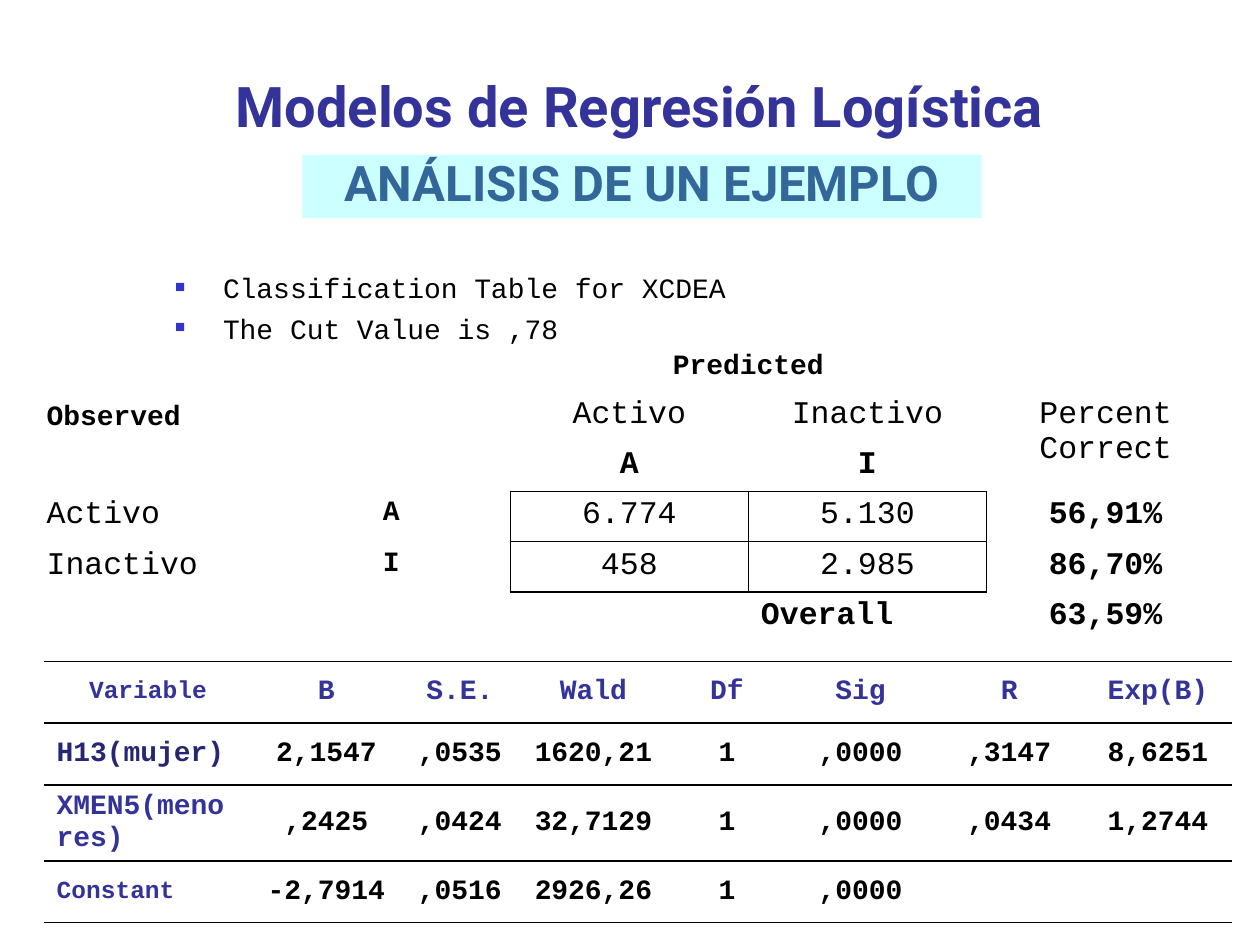
from dataclasses import dataclass

import pptx
import pptx.dml.color
import pptx.enum.shapes
import pptx.enum.text
import pptx.oxml.ns
import pptx.util
from lxml import etree
from pptx.util import Inches

ALIGN = pptx.enum.text.PP_ALIGN
ANCHOR = pptx.enum.text.MSO_ANCHOR
qn = pptx.oxml.ns.qn


@dataclass(frozen=True)
class Theme:
    heading_font: str = "Roboto"
    body_font: str = "Courier New"
    title: str = "333399"
    subtitle: str = "336699"
    band: str = "CCFFFF"
    bullet: str = "3333CC"
    text: str = "000000"
    variable: str = "262673"
    title_size: int = 32
    subtitle_size: int = 28
    large: int = 18
    normal: int = 16
    small: int = 14
    plain_table: str = "{2D5ABB26-0587-4C30-8999-92F81FD0307C}"


THEME = Theme()
BULLETS = ["Classification Table for XCDEA", "The Cut Value is ,78"]
CLASSIFICATION = [
    ["Observed", "", "Predicted", "", ""],
    ["", "", "Activo", "Inactivo", "Percent Correct"],
    ["", "", "A", "I", ""],
    ["Activo", "A", "6.774", "5.130", "56,91%"],
    ["Inactivo", "I", "458", "2.985", "86,70%"],
    ["", "", "", "Overall", "63,59%"],
]
COEFFICIENTS = [
    ["Variable", "B", "S.E.", "Wald", "Df", "Sig", "R", "Exp(B)"],
    ["H13(mujer)", "2,1547", ",0535", "1620,21", "1", ",0000", ",3147", "8,6251"],
    ["XMEN5(menores)", ",2425", ",0424", "32,7129", "1", ",0000", ",0434", "1,2744"],
    ["Constant", "-2,7914", ",0516", "2926,26", "1", ",0000", "", ""],
]


def rgb(value):
    return pptx.dml.color.RGBColor.from_string(value)


def add_span(para, text, size, color=THEME.text, bold=False, font=THEME.body_font):
    span = para.add_run()
    span.text = text
    span.font.size = pptx.util.Pt(size)
    span.font.name = font
    span.font.bold = bold
    span.font.color.rgb = rgb(color)


def place(box, left, top, width, height):
    box.left, box.top = Inches(left), Inches(top)
    box.width, box.height = Inches(width), Inches(height)


def set_frame(frame, anchor):
    frame.word_wrap = True
    frame.auto_size = pptx.enum.text.MSO_AUTO_SIZE.NONE
    frame.vertical_anchor = anchor


def add_title(page):
    box = page.shapes.title
    place(box, 1.77, 0.52, 7.22, 0.63)
    set_frame(box.text_frame, ANCHOR.TOP)
    para = box.text_frame.paragraphs[0]
    para.alignment = ALIGN.LEFT
    add_span(para, "Modelos de Regresión Logística", THEME.title_size,
             THEME.title, True, THEME.heading_font)


def add_subtitle(page):
    box = page.shapes.add_shape(
        pptx.enum.shapes.MSO_SHAPE.RECTANGLE,
        Inches(2.4), Inches(1.23), Inches(5.39), Inches(0.5))
    box.shadow.inherit = False
    box.fill.solid()
    box.fill.fore_color.rgb = rgb(THEME.band)
    box.line.fill.background()
    set_frame(box.text_frame, ANCHOR.MIDDLE)
    para = box.text_frame.paragraphs[0]
    para.alignment = ALIGN.CENTER
    para.line_spacing = 0.85
    add_span(para, "ANÁLISIS DE UN EJEMPLO", THEME.subtitle_size,
             THEME.subtitle, True, THEME.heading_font)


def add_bullet(para):
    props = para._p.get_or_add_pPr()
    props.set("marL", str(Inches(0.38)))
    props.set("indent", str(-Inches(0.38)))
    color = etree.SubElement(props, qn("a:buClr"))
    etree.SubElement(color, qn("a:srgbClr"), val=THEME.bullet)
    etree.SubElement(props, qn("a:buSzPct"), val="60000")
    etree.SubElement(props, qn("a:buFont"), typeface=THEME.body_font)
    etree.SubElement(props, qn("a:buChar"), char="■")


def add_list(page):
    box = page.placeholders[1]
    place(box, 1.29, 2.1, 7.96, 0.6)
    frame = box.text_frame
    set_frame(frame, ANCHOR.TOP)
    for index, text in enumerate(BULLETS):
        para = frame.add_paragraph() if index else frame.paragraphs[0]
        para.space_before = pptx.util.Pt(4)
        add_bullet(para)
        add_span(para, text, THEME.normal)


def add_grid(page, left, top, widths, heights):
    frame = page.shapes.add_table(
        len(heights), len(widths), Inches(left), Inches(top),
        Inches(sum(widths)), Inches(sum(heights)))
    grid = frame.table
    grid.first_row = grid.horz_banding = False
    grid._tbl.tblPr.find(qn("a:tableStyleId")).text = THEME.plain_table
    for column, width in zip(grid.columns, widths):
        column.width = Inches(width)
    for row, height in zip(grid.rows, heights):
        row.height = Inches(height)
    return grid


def fill_cell(cell, text, size, color, bold, align, anchor, edges):
    para = cell.text_frame.paragraphs[0]
    para.alignment = align
    cell.vertical_anchor = anchor
    if text:
        add_span(para, text, size, color, bold)
    else:
        etree.SubElement(para._p, qn("a:endParaRPr"), sz=str(THEME.small * 100))
    for side in edges:
        line = etree.SubElement(cell._tc.get_or_add_tcPr(), qn("a:ln" + side), w="12700")
        paint = etree.SubElement(line, qn("a:solidFill"))
        etree.SubElement(paint, qn("a:srgbClr"), val=THEME.text)
    cell.fill.background()


def boxed(row, column):
    return row in (3, 4) and column in (2, 3)


def box_edges(row, column):
    """Sides of a cell that touch the boxed counts."""
    neighbours = {"L": (row, column - 1), "R": (row, column + 1),
                  "T": (row - 1, column), "B": (row + 1, column)}
    return [side for side, other in neighbours.items()
            if boxed(row, column) or boxed(*other)]


def add_classification(page):
    grid = add_grid(page, 0.27, 2.73, [1.89] * 5, [0.37] + [0.4] * 5)
    for first, last in [((0, 0), (2, 0)), ((0, 1), (2, 1)), ((0, 2), (0, 3)),
                        ((1, 4), (2, 4)), ((5, 0), (5, 2))]:
        grid.cell(*first).merge(grid.cell(*last))
    for row, texts in enumerate(CLASSIFICATION):
        for column, text in enumerate(texts):
            cell = grid.cell(row, column)
            size = THEME.normal if row == 0 or column == 1 else THEME.large
            bold = (row in (0, 2, 5) or column == 1
                    or (column == 4 and row > 2))
            align = ALIGN.LEFT if column == 0 or text == "Overall" else ALIGN.CENTER
            anchor = ANCHOR.MIDDLE if row == 0 else ANCHOR.TOP
            edges = [] if cell.is_spanned else box_edges(row, column)
            if (row, column) == (4, 2):  # open below
                edges.remove("B")
            fill_cell(cell, text, size, THEME.text, bold, align, anchor, edges)


def add_coefficients(page):
    grid = add_grid(page, 0.35, 5.25,
                    [1.65, 1.18, 0.94, 1.18, 0.94, 1.18, 1.18, 1.18], [0.49] * 4)
    for row, texts in enumerate(COEFFICIENTS):
        for column, text in enumerate(texts):
            label = row == 0 or column == 0
            color = THEME.title if label else THEME.text
            if (row, column) == (1, 0):
                color = THEME.variable
            size = THEME.small if text in ("Variable", "Constant") else THEME.normal
            align = ALIGN.LEFT if row and column == 0 else ALIGN.CENTER
            fill_cell(grid.cell(row, column), text, size, color, True, align,
                      ANCHOR.MIDDLE, "TB")


def main():
    deck = pptx.Presentation()
    deck.slide_width, deck.slide_height = Inches(10), Inches(7.5)
    page = deck.slides.add_slide(deck.slide_layouts[1])
    # Headings
    add_title(page)
    add_subtitle(page)
    # Classification results
    add_list(page)
    add_classification(page)
    # Model coefficients
    add_coefficients(page)
    deck.save("out.pptx")


if __name__ == "__main__":
    main()
